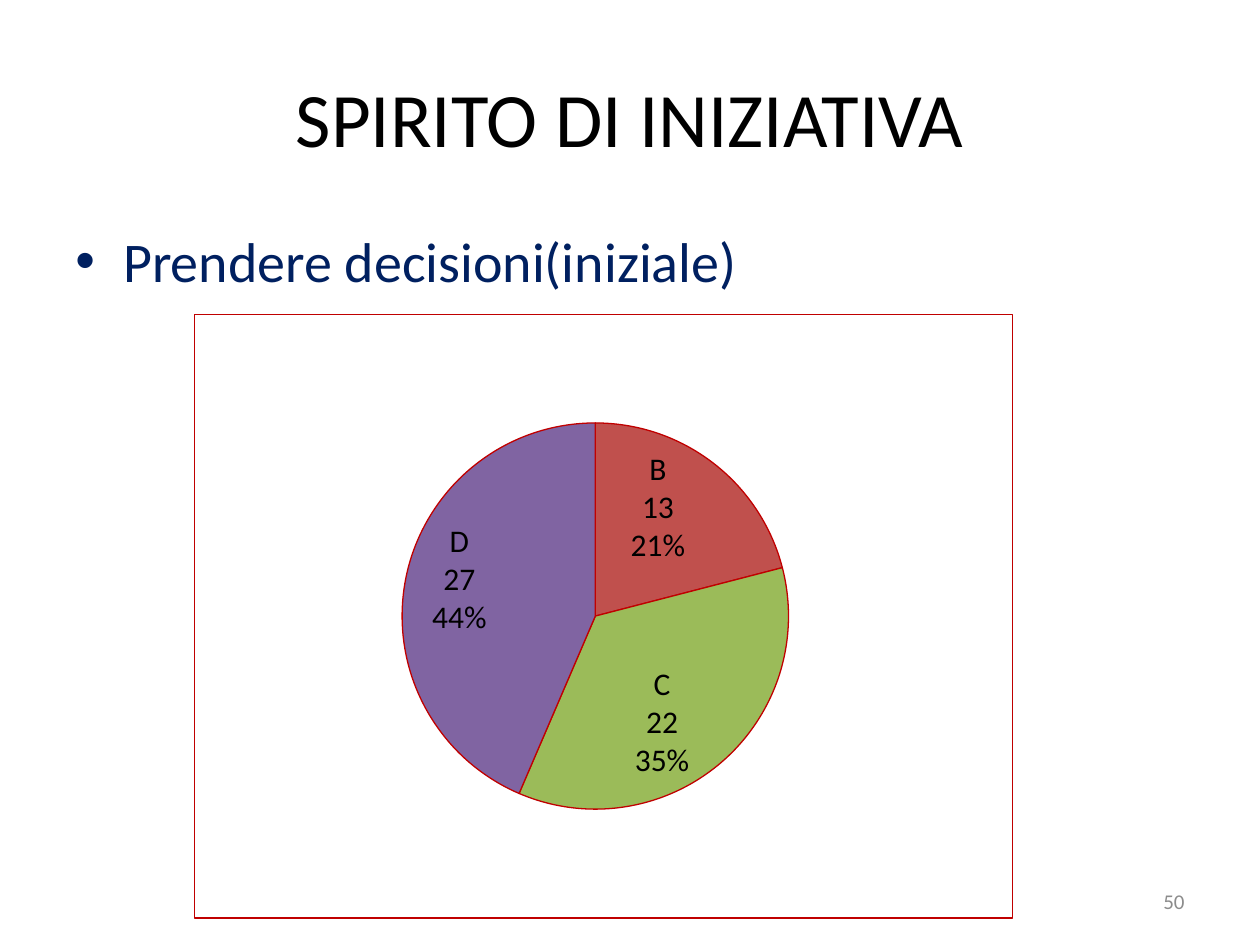
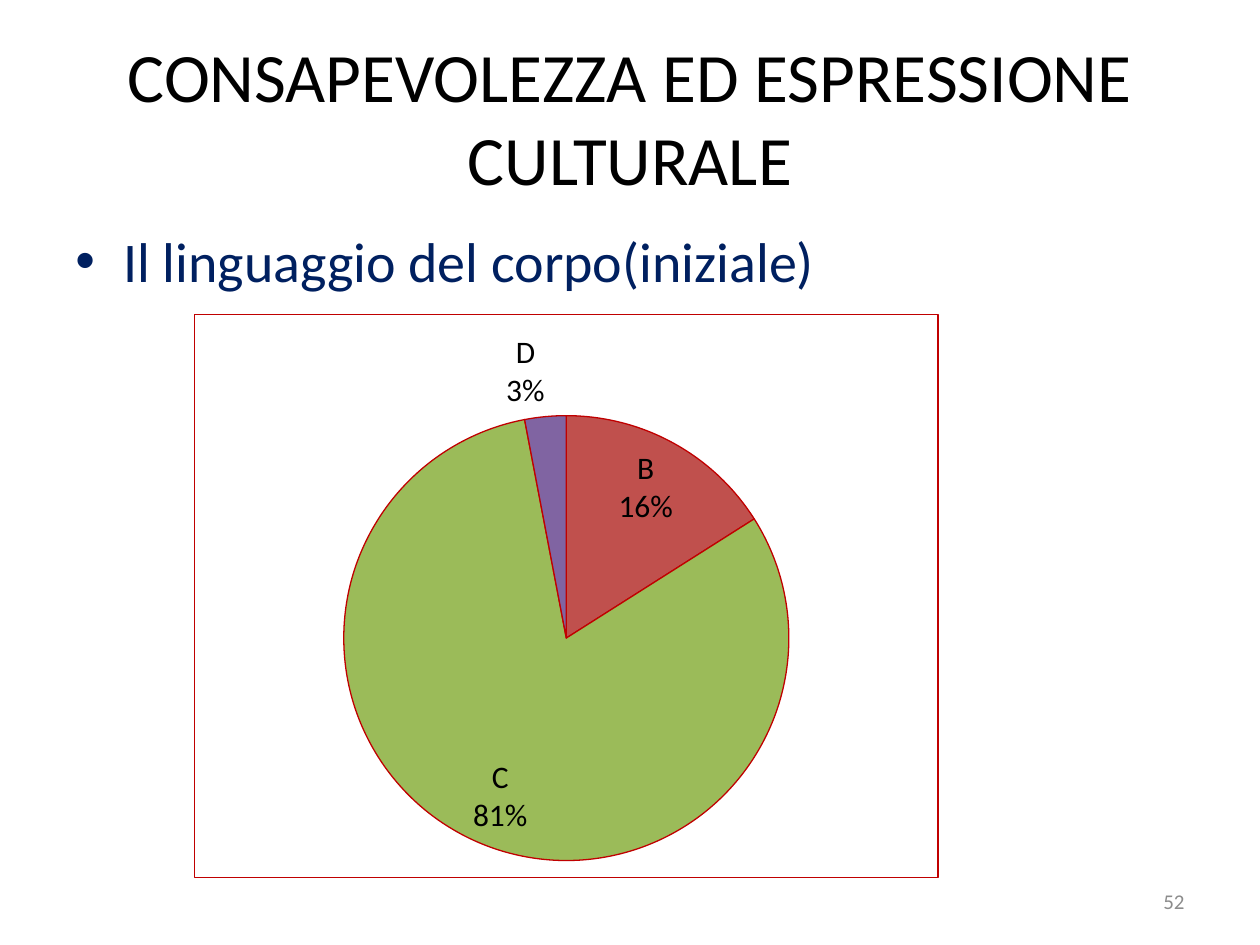
from lxml.etree import SubElement
from pptx import Presentation
from pptx.chart.data import CategoryChartData
from pptx.dml.color import RGBColor
from pptx.enum.chart import XL_CHART_TYPE, XL_LABEL_POSITION
from pptx.enum.text import MSO_ANCHOR, PP_ALIGN
from pptx.oxml import parse_xml
from pptx.oxml.ns import nsdecls, qn
from pptx.util import Inches, Pt

FONT = "Calibri"
BLACK, NAVY, GREY, RED = "000000", "002060", "8C8C8C", "C00000"
LEVELS = {"A": "4F81BD", "B": "C0504D", "C": "9BBB59", "D": "8064A2"}
LINE_WIDTH = 0.75

SLIDES = [
    {"title": "SPIRITO DI INIZIATIVA", "title_size": 44,
     "topic": "Prendere decisioni(iniziale)", "number": "50",
     "values": (0, 13, 22, 27), "show_value": True,
     "chart_size": (6.5, 4.8),
     "pie": {"x": 0.25, "y": 0.18, "w": 0.48, "h": 0.64}},
    {"title": "CONSAPEVOLEZZA ED ESPRESSIONE CULTURALE", "title_size": 39.6,
     "topic": "Il linguaggio del corpo(iniziale)", "number": "52",
     "values": (0, 16, 81, 3), "show_value": False,
     "chart_size": (5.91, 4.48),
     "pie": {"x": 0.2, "y": 0.18, "w": 0.6, "h": 0.79}},
]

TITLE_AREA = (0.5, 0.3, 9, 1.25)
TOPIC_AREA = (0.5, 1.75, 9, 4.95)
NUMBER_AREA = (7.17, 6.95, 2.33, 0.4)
CHART_CORNER = (1.54, 2.49)


def color(value):
    return RGBColor.from_string(value)


def set_font(font, size, value):
    for name, setting in {"name": FONT, "size": Pt(size)}.items():
        setattr(font, name, setting)
    font.color.rgb = color(value)


def add_text(page, text, area, size, value, align=PP_ALIGN.LEFT,
             anchor=MSO_ANCHOR.MIDDLE, bullet=False):
    box = page.shapes.add_textbox(*map(Inches, area))
    frame = box.text_frame
    frame.word_wrap = True
    frame.vertical_anchor = anchor
    para = frame.paragraphs[0]
    para.alignment = align
    if bullet:
        properties = para._p.get_or_add_pPr()
        properties.set("marL", str(Inches(0.38)))
        properties.set("indent", str(-Inches(0.38)))
        SubElement(properties, qn("a:buFont")).set("typeface", "Arial")
        SubElement(properties, qn("a:buChar")).set("char", "•")
    span = para.add_run()
    span.text = text
    set_font(span.font, size, value)


def place_pie(chart, pie):
    plot_area = chart._chartSpace.chart.plotArea
    for old in plot_area.findall(qn("c:layout")):
        plot_area.remove(old)
    sizes = "".join(f'<c:{side} val="{share}"/>' for side, share in pie.items())
    plot_area.insert(0, parse_xml(
        f'<c:layout {nsdecls("c")}><c:manualLayout><c:layoutTarget val="inner"/>'
        f'<c:xMode val="edge"/><c:yMode val="edge"/>{sizes}'
        '</c:manualLayout></c:layout>'))


def add_border(chart):
    chart._chartSpace.chart.addnext(parse_xml(
        f'<c:spPr {nsdecls("c", "a")}><a:noFill/><a:ln w="{Pt(LINE_WIDTH)}">'
        f'<a:solidFill><a:srgbClr val="{RED}"/></a:solidFill></a:ln></c:spPr>'))


def add_labels(series, show_value):
    labels = series.data_labels
    settings = {"show_value": show_value, "show_category_name": True,
                "show_percentage": True, "position": XL_LABEL_POSITION.BEST_FIT}
    for name, setting in settings.items():
        setattr(labels, name, setting)
    set_font(labels.font, 18, BLACK)
    element = labels._element
    separator = parse_xml(f'<c:separator {nsdecls("c")}>\n</c:separator>')
    element.find(qn("c:showPercent")).addnext(separator)
    bubble = element.find(qn("c:showBubbleSize"))
    if bubble is not None:
        bubble.addnext(separator)
    empty = [index for index, value in enumerate(series.values) if not value]
    for place, index in enumerate(empty):
        element.insert(place, parse_xml(
            f'<c:dLbl {nsdecls("c")}><c:idx val="{index}"/>'
            '<c:delete val="1"/></c:dLbl>'))


def add_pie(page, content):
    data = CategoryChartData()
    data.categories = list(LEVELS)
    data.add_series("Series 1", content["values"])
    area = map(Inches, CHART_CORNER + content["chart_size"])
    chart = page.shapes.add_chart(XL_CHART_TYPE.PIE, *area, data).chart
    chart.has_legend = False
    chart.has_title = False
    set_font(chart.font, 18, BLACK)
    chart.plots[0].vary_by_categories = True
    series = chart.plots[0].series[0]
    for index, fill in enumerate(LEVELS.values()):
        style = series.points[index].format
        style.fill.solid()
        style.fill.fore_color.rgb = color(fill)
        style.line.color.rgb = color(RED)
        style.line.width = Pt(LINE_WIDTH)
    add_labels(series, content["show_value"])
    place_pie(chart, content["pie"])
    add_border(chart)


def main():
    deck = Presentation()
    deck.slide_width, deck.slide_height = Inches(10), Inches(7.5)
    for content in SLIDES:
        page = deck.slides.add_slide(deck.slide_layouts[6])
        add_text(page, content["title"], TITLE_AREA, content["title_size"],
                 BLACK, PP_ALIGN.CENTER)
        add_text(page, content["topic"], TOPIC_AREA, 32, NAVY,
                 anchor=MSO_ANCHOR.TOP, bullet=True)
        add_text(page, content["number"], NUMBER_AREA, 12, GREY, PP_ALIGN.RIGHT)
        add_pie(page, content)
    deck.save("out.pptx")


if __name__ == "__main__":
    main()
